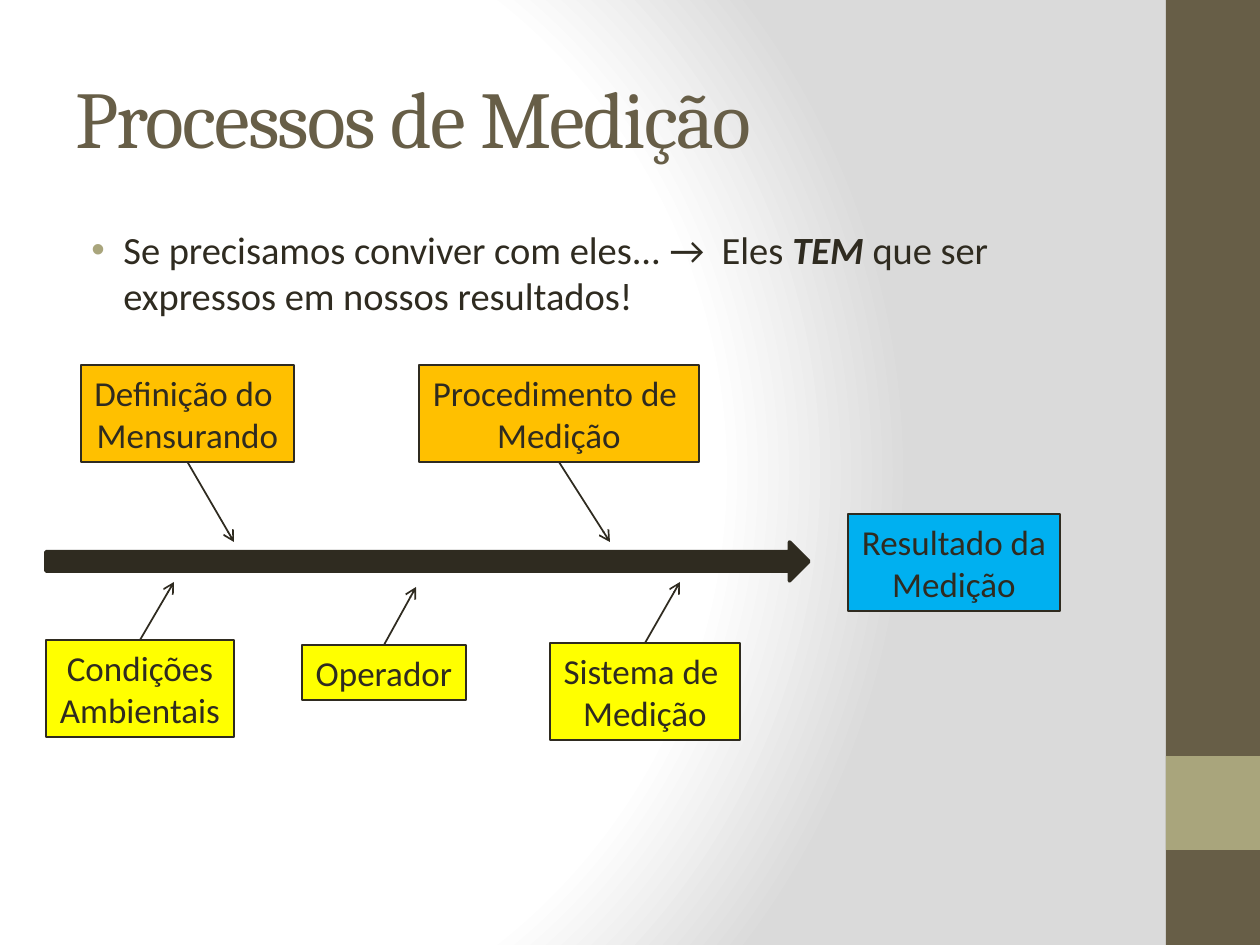
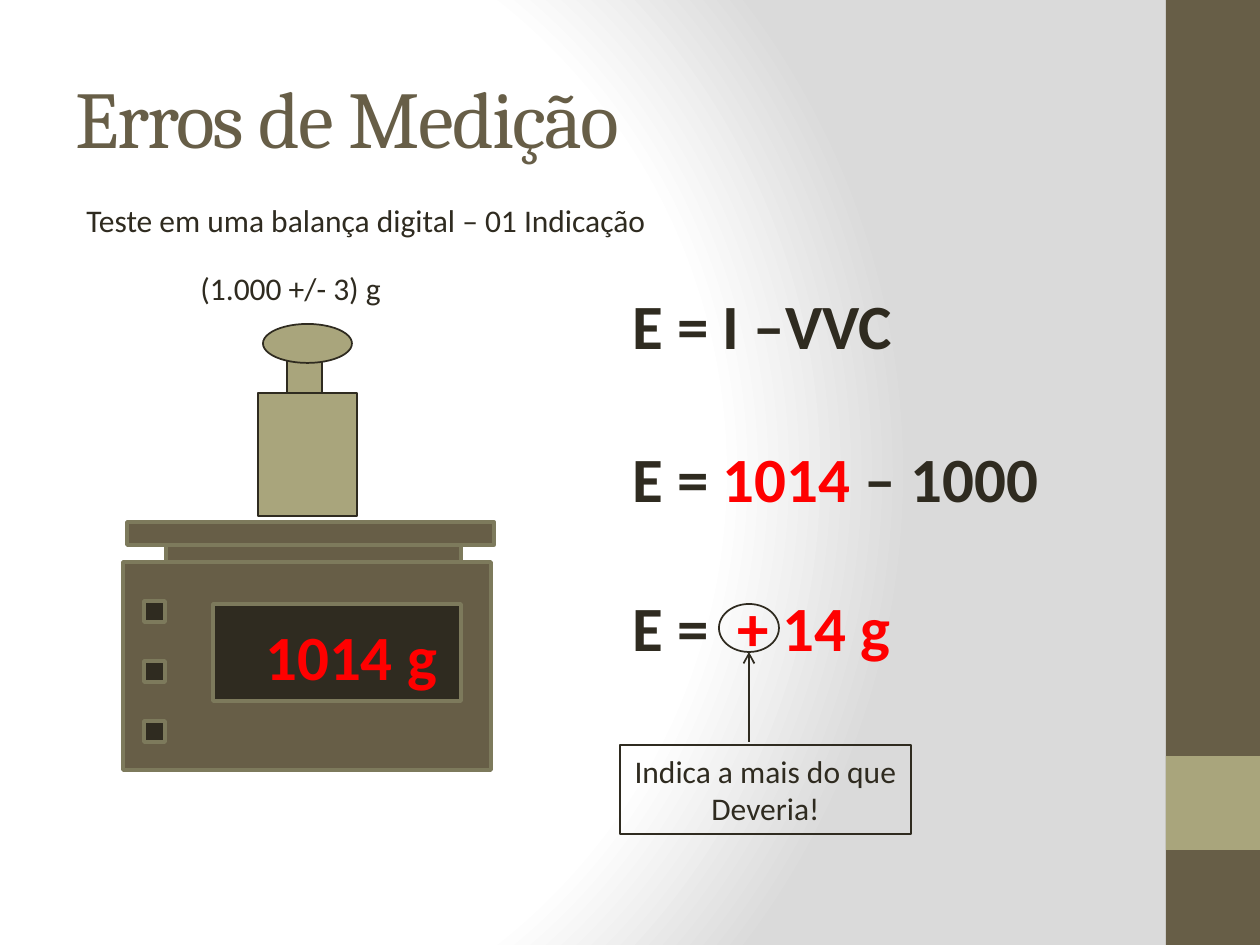
from dataclasses import dataclass
from typing import Optional

from lxml import etree
from pptx import Presentation, oxml
from pptx import util as u
from pptx.dml import color
from pptx.enum import shapes, text
from pptx.oxml import ns

EMU_PER_PX = 914400 / 126
COLORS = {
    "white": "FFFFFF", "gray": "DADADA", "brown": "675E47", "khaki": "A9A57C",
    "olive": "7D7A5C", "ink": "2F2B20", "red": "FF0000", "orange": "FFC000",
    "yellow": "FFFF00", "blue": "00B0F0",
}
TITLE = {"name": "Cambria", "size": u.Pt(46)}
BODY = {"name": "Calibri", "size": u.Pt(22)}
LABEL = {"name": "Calibri", "size": u.Pt(20)}
NOTE = {"name": "Calibri", "size": u.Pt(18)}
FORMULA = {"name": "Calibri", "size": u.Pt(36), "bold": True}
STRONG = {"bold": True, "italic": True}
FIT = {"word_wrap": False, "auto_size": text.MSO_AUTO_SIZE.SHAPE_TO_FIT_TEXT}
WRAP = {"word_wrap": True}
CENTER = text.PP_ALIGN.CENTER
RECT = shapes.MSO_SHAPE.RECTANGLE
PROCESS = shapes.MSO_SHAPE.FLOWCHART_PROCESS
OVAL = shapes.MSO_SHAPE.OVAL
TOP, BOTTOM = 0, 2


@dataclass
class Box:
    x: int
    y: int
    w: int
    h: int
    fill: Optional[str] = None
    line: Optional[str] = None
    weight: float = 1
    kind: int = RECT


@dataclass
class Run:
    text: str
    color: str = "ink"
    fmt: Optional[dict] = None


@dataclass
class Factor:
    label: str
    box: Box
    side: int
    tip: tuple


def px(n: float) -> int:
    return round(n * EMU_PER_PX)


def rgb(name: str) -> color.RGBColor:
    return color.RGBColor.from_string(COLORS[name])


def apply(target, values: dict) -> None:
    for name, value in values.items():
        setattr(target, name, value)


def set_line(line, name: str, weight: float) -> None:
    line.color.rgb = rgb(name)
    line.width = u.Pt(weight)


def write(sp, lines: list, fmt: dict, frame: dict, align=None) -> None:
    tf = sp.text_frame
    apply(tf, frame)
    for i, runs in enumerate(lines):
        p = tf.paragraphs[0] if i == 0 else tf.add_paragraph()
        p.alignment = align
        for run in runs:
            r = p.add_run()
            r.text = run.text
            apply(r.font, {**fmt, **(run.fmt or {})})
            r.font.color.rgb = rgb(run.color)


def add_box(s, box: Box, label: str = "", fmt: Optional[dict] = None):
    sp = s.shapes.add_shape(box.kind, *map(px, (box.x, box.y, box.w, box.h)))
    sp.shadow.inherit = False
    if box.fill:
        sp.fill.solid()
        sp.fill.fore_color.rgb = rgb(box.fill)
    else:
        sp.fill.background()
    if box.line:
        set_line(sp.line, box.line, box.weight)
    else:
        sp.line.fill.background()
    if label:
        write(sp, [[Run(t)] for t in label.split("\n")], fmt, FIT, CENTER)
    return sp


def add_text(s, x: int, y: int, w: int, h: int, runs: list, fmt: dict, frame: dict = FIT):
    sp = s.shapes.add_textbox(*map(px, (x, y, w, h)))
    write(sp, [runs], fmt, frame)
    return sp


def add_arrow(s, start: tuple, tip: tuple):
    c = s.shapes.add_connector(shapes.MSO_CONNECTOR.STRAIGHT, *map(px, start + tip))
    set_line(c.line, "ink", 1)
    sp_pr = c.element.spPr
    etree.SubElement(sp_pr.find(ns.qn("a:ln")), ns.qn("a:tailEnd"), type="arrow")
    etree.SubElement(sp_pr, ns.qn("a:effectLst"))
    return c


def set_background(s) -> None:
    stops = "".join(
        f'<a:gs pos="{pos}000"><a:srgbClr val="{COLORS[name]}"/></a:gs>'
        for pos, name in ((0, "white"), (75, "white"), (100, "gray")))
    s.element.cSld.insert(0, oxml.parse_xml(
        f'<p:bg {ns.nsdecls("p", "a")}><p:bgPr><a:gradFill rotWithShape="1">'
        f'<a:gsLst>{stops}</a:gsLst><a:path path="circle">'
        '<a:fillToRect l="20000" t="50000" r="100000" b="50000"/></a:path>'
        '</a:gradFill><a:effectLst/></p:bgPr></p:bg>'))


def new_slide(prs, title: str):
    s = prs.slides.add_slide(prs.slide_layouts[6])
    set_background(s)
    add_box(s, Box(1166, 0, 94, 945, "brown"))
    add_box(s, Box(1166, 756, 94, 94, "khaki"))
    sp = add_text(s, 63, 38, 1050, 157, [Run(title, "brown")], TITLE,
                  {**WRAP, "vertical_anchor": text.MSO_ANCHOR.MIDDLE})
    sp.text_frame.paragraphs[0].runs[0].font._element.set("spc", "-100")
    return s


def add_bullet(p) -> None:
    p.space_before = u.Pt(4)
    p_pr = p._p.get_or_add_pPr()
    p_pr.set("marL", str(px(48)))
    p_pr.set("indent", str(px(-32)))
    tint = etree.SubElement(p_pr, ns.qn("a:buClr"))
    etree.SubElement(tint, ns.qn("a:srgbClr"), val=COLORS["khaki"])
    etree.SubElement(p_pr, ns.qn("a:buFont"), typeface="Arial")
    etree.SubElement(p_pr, ns.qn("a:buChar"), char="•")


def build_process(prs) -> None:
    s = new_slide(prs, "Processos de Medição")
    sp = add_text(s, 63, 220, 1050, 123, [
        Run("Se precisamos conviver com eles... →  Eles "),
        Run("TEM", fmt=STRONG),
        Run(" que ser expressos em nossos resultados!")], BODY, WRAP)
    add_bullet(sp.text_frame.paragraphs[0])

    def label_box(x: int, y: int, w: int, h: int, fill: str) -> Box:
        return Box(x, y, w, h, fill, "ink", 0.75)

    factors = [
        Factor("Definição do \nMensurando", label_box(81, 365, 213, 97, "orange"), BOTTOM, (234, 542)),
        Factor("Procedimento de \nMedição", label_box(419, 365, 280, 97, "orange"), BOTTOM, (610, 542)),
        Factor("Condições\nAmbientais", label_box(46, 640, 188, 97, "yellow"), TOP, (174, 582)),
        Factor("Operador", label_box(302, 645, 164, 55, "yellow"), TOP, (416, 587)),
        Factor("Sistema de \nMedição", label_box(550, 643, 190, 97, "yellow"), TOP, (680, 582)),
    ]
    add_box(s, label_box(848, 514, 212, 97, "blue"), "Resultado da\nMedição", LABEL)
    add_box(s, Box(46, 542, 763, 39, "ink", "ink", 2, shapes.MSO_SHAPE.RIGHT_ARROW))
    for f in factors:
        sp = add_box(s, f.box, f.label, LABEL)
        add_arrow(s, (f.box.x, f.box.y), f.tip).begin_connect(sp, f.side)


def build_errors(prs) -> None:
    s = new_slide(prs, "Erros de Medição")

    def scale_part(x: int, y: int, w: int, h: int, fill: str = "brown") -> Box:
        return Box(x, y, w, h, fill, "olive", 2, PROCESS)

    def weight_part(x: int, y: int, w: int, h: int, kind: int = PROCESS) -> Box:
        return Box(x, y, w, h, "khaki", "ink", 1, kind)

    neck = weight_part(287, 354, 35, 123)
    support = scale_part(166, 522, 295, 63)
    body = scale_part(123, 562, 368, 208)
    display = scale_part(213, 604, 248, 97, "ink")
    pan = scale_part(127, 522, 367, 23)
    buttons = [scale_part(144, 601 + 60 * i, 21, 21, "ink") for i in range(3)]
    block = weight_part(258, 393, 99, 123)
    knob = weight_part(263, 324, 89, 39, OVAL)
    for part in (neck, support, body, display, pan, *buttons, block, knob):
        add_box(s, part)

    add_box(s, Box(719, 604, 60, 48, None, "ink", 1, OVAL))
    add_arrow(s, (749, 742), (749, 652))
    add_box(s, Box(620, 745, 291, 89, None, "ink", 0.75),
            "Indica a mais do que\nDeveria!", NOTE)

    add_text(s, 253, 611, 199, 89, [Run("1014 g", "red")], FORMULA)
    add_text(s, 188, 263, 208, 50, [Run("(1.000 +/- 3) g")], NOTE)
    add_text(s, 74, 195, 591, 50, [Run("Teste em uma balança digital – 01 Indicação")], NOTE)
    add_text(s, 620, 280, 287, 89, [Run("E = I –VVC")], FORMULA)
    add_text(s, 620, 433, 435, 89,
             [Run("E = "), Run("1014", "red"), Run(" – 1000")], FORMULA)
    add_text(s, 620, 582, 286, 89, [Run("E =  "), Run("+ 14 g", "red")], FORMULA)


def main() -> None:
    prs = Presentation()
    apply(prs, {"slide_width": px(1260), "slide_height": px(945)})
    build_process(prs)
    build_errors(prs)
    prs.save("out.pptx")


if __name__ == "__main__":
    main()
